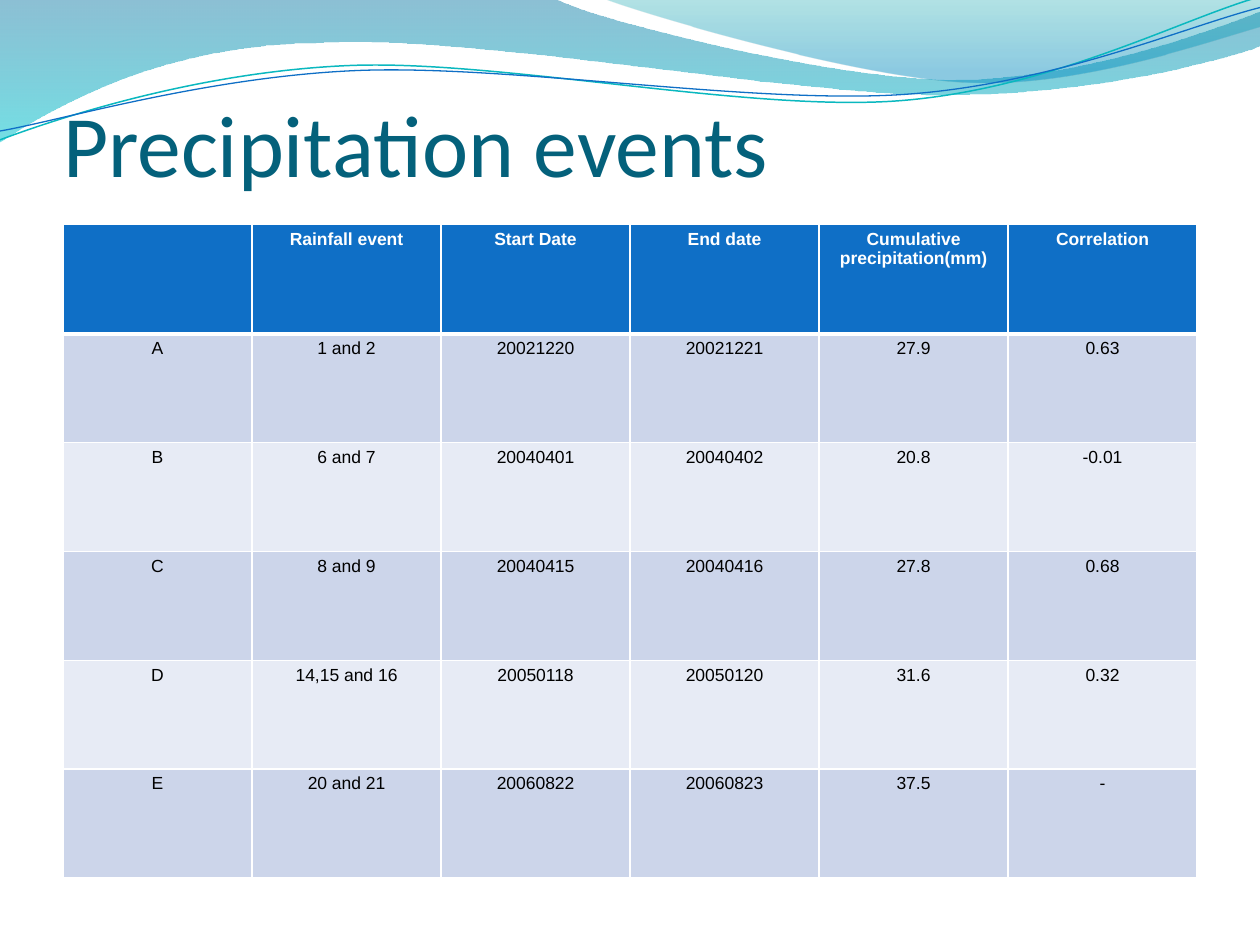
"""Build the precipitation events slide: wave header, title and event table."""
import math
from dataclasses import dataclass

from lxml import etree
from pptx import Presentation
from pptx import util as u
from pptx.dml.color import RGBColor
from pptx.enum import text
from pptx.oxml import ns

TITLE = "Precipitation events"
ROWS = [
    ("", "Rainfall event", "Start Date", "End date", "Cumulative precipitation(mm)", "Correlation"),
    ("A", "1 and 2", "20021220", "20021221", "27.9", "0.63"),
    ("B", "6 and 7", "20040401", "20040402", "20.8", "-0.01"),
    ("C", "8 and 9", "20040415", "20040416", "27.8", "0.68"),
    ("D", "14,15 and 16", "20050118", "20050120", "31.6", "0.32"),
    ("E", "20 and 21", "20060822", "20060823", "37.5", "-"),
]
BANDS = [
    {"points": [(0, -0.01), (4.4, -0.01),
                (4.76, 0.17, 6.64, 0.63, 7.58, 0.63), (8.53, 0.63, 9.58, 0.26, 10, 0.09),
                (10.01, 0.36), (9.83, 0.44, 8.7, 0.76, 7.46, 0.75),
                (6.22, 0.75, 3.82, 0.28, 2.57, 0.34), (1.29, 0.35, 0.46, 0.83, -0.01, 1.13),
                (0, -0.01)],
     "stops": [(0, "0074A1", 45), (1, "00C6CF", 55)]},
    {"points": [(4.79, -0.01), (5.09, 0.11, 6.82, 0.62, 7.69, 0.65),
                (8.56, 0.69, 9.61, 0.32, 10, 0.21), (10, 0), (4.79, -0.01)],
     "stops": [(0, "00A1A9", 30), (0.8, "008BBF", 45)]},
]
WAVES = [
    {"points": [(0, 1.11), (0.48, 0.93, 1.58, 0.57, 2.77, 0.52),
                (3.95, 0.47, 5.93, 0.89, 7.13, 0.8), (8.33, 0.71, 9.38, 0.15, 9.98, -0.02)],
     "color": "0AB8BF", "width": 0.85},
    {"points": [(0, 1.04), (0.47, 0.96, 1.64, 0.61, 2.83, 0.56),
                (4.03, 0.51, 5.97, 0.83, 7.17, 0.75), (8.36, 0.67, 9.41, 0.21, 10, 0.06)],
     "color": "0F6FC6", "width": 0.75},
]


@dataclass(frozen=True)
class Theme:
    title: str = "04617B"
    header: str = "0F6FC6"
    bands: tuple = ("E7EBF5", "CCD5EA")
    body: str = "000000"
    white: str = "FFFFFF"
    title_font: str = "Calibri"
    table_font: str = "Arial"
    title_size: int = 50
    table_size: int = 10


THEME = Theme()
WIDTH, HEIGHT, MARGIN = 10, 7.5, 0.5
TABLE_TOP, TABLE_HEIGHT, HEADER_HEIGHT = 1.78, 5.19, 0.87
WAVE_TILT, WAVE_PIVOT = -2.7, (4.99, 0.58)
HEADER_BORDERS = {"L": 1, "R": 1, "T": 1, "B": 3}


def rgb(value):
    return RGBColor.from_string(value)


def style_font(font, name, size, color, bold=False):
    font.name, font.size, font.bold = name, u.Pt(size), bold
    font.color.rgb = rgb(color)


def turn(point, degrees):
    """Rotate a point about the centre of the waves."""
    angle = math.radians(degrees)
    dx, dy = (value - centre for value, centre in zip(point, WAVE_PIVOT))
    return (WAVE_PIVOT[0] + dx * math.cos(angle) - dy * math.sin(angle),
            WAVE_PIVOT[1] + dx * math.sin(angle) + dy * math.cos(angle))


def add_outline(holder, points, close, tilt=0):
    """Draw corners as lines and six-number entries as cubic curves."""
    pairs = [turn(part[i:i + 2], -tilt) for part in points for i in range(0, len(part), 2)]
    start, *rest = [(u.Inches(x), u.Inches(y)) for x, y in pairs]
    builder = holder.shapes.build_freeform(*start)
    builder.add_line_segments(rest, close=close)
    shape = builder.convert_to_shape()
    shape.shadow.inherit = False
    shape.rotation = tilt % 360
    segments = iter(list(shape._element.iter(ns.qn("a:lnTo"))))
    for part in points[1:]:
        segment = next(segments)
        if len(part) == 6:
            curve = etree.Element(ns.qn("a:cubicBezTo"))
            segment.addprevious(curve)
            for piece in (segment, next(segments), next(segments)):
                curve.append(piece[0])
                piece.getparent().remove(piece)
    return shape


def add_band(page, points, stops):
    shape = add_outline(page, points, True)
    shape.line.fill.background()
    shape.fill.gradient()
    shape.fill.gradient_angle = 270
    for stop, (position, color, _) in zip(shape.fill.gradient_stops, stops):
        stop.position = position
        stop.color.rgb = rgb(color)
    colors = shape._element.spPr.iter(ns.qn("a:srgbClr"))
    for node, (_, _, opacity) in zip(colors, stops):
        etree.SubElement(node, ns.qn("a:alpha"), val=str(opacity * 1000))


def add_wave(group, points, color, width):
    shape = add_outline(group, points, False, WAVE_TILT)
    shape.fill.background()
    shape.line.color.rgb = rgb(color)
    shape.line.width = u.Pt(width)


def place_title(page):
    title = page.shapes.title
    page.shapes._spTree.append(title._element)
    title.left, title.top = u.Inches(MARGIN), u.Inches(0.3)
    title.width, title.height = u.Inches(WIDTH - 2 * MARGIN), u.Inches(1.25)
    frame = title.text_frame
    frame.text = TITLE
    frame.auto_size = text.MSO_AUTO_SIZE.NONE
    frame.vertical_anchor = text.MSO_ANCHOR.BOTTOM
    frame.margin_left = frame.margin_right = frame.margin_bottom = 0
    frame.margin_top = u.Inches(0.05)
    para = frame.paragraphs[0]
    para.alignment = text.PP_ALIGN.LEFT
    style_font(para.runs[0].font, THEME.title_font, THEME.title_size, THEME.title)


def set_borders(cell, widths):
    """Insert the side lines ahead of the cell fill, as the schema orders them."""
    properties = cell._tc.get_or_add_tcPr()
    for index, (side, width) in enumerate(widths.items()):
        line = etree.Element(ns.qn(f"a:ln{side}"), w=str(u.Pt(width)))
        fill = etree.SubElement(line, ns.qn("a:solidFill"))
        etree.SubElement(fill, ns.qn("a:srgbClr"), val=THEME.white)
        properties.insert(index, line)


def add_table(page):
    table = page.shapes.add_table(
        len(ROWS), len(ROWS[0]), u.Inches(MARGIN), u.Inches(TABLE_TOP),
        u.Inches(WIDTH - 2 * MARGIN), u.Inches(TABLE_HEIGHT)).table
    body_height = (TABLE_HEIGHT - HEADER_HEIGHT) / (len(ROWS) - 1)
    for r, row in enumerate(ROWS):
        header = r == 0
        table.rows[r].height = u.Inches(HEADER_HEIGHT if header else body_height)
        for c, value in enumerate(row):
            cell = table.cell(r, c)
            cell.fill.solid()
            cell.fill.fore_color.rgb = rgb(THEME.header if header else THEME.bands[r % 2])
            if header:
                set_borders(cell, HEADER_BORDERS)
            cell.margin_left = cell.margin_right = u.Inches(0.04)
            cell.margin_top = cell.margin_bottom = u.Inches(0.04)
            if not value:
                continue
            cell.text_frame.text = value
            para = cell.text_frame.paragraphs[0]
            para.alignment = text.PP_ALIGN.CENTER
            style_font(para.runs[0].font, THEME.table_font, THEME.table_size,
                       THEME.white if header else THEME.body, header)


def main():
    deck = Presentation()
    deck.slide_width, deck.slide_height = u.Inches(WIDTH), u.Inches(HEIGHT)
    page = deck.slides.add_slide(deck.slide_layouts[5])
    for band in BANDS:
        add_band(page, **band)
    waves = page.shapes.add_group_shape()
    for wave in WAVES:
        add_wave(waves, **wave)
    place_title(page)
    add_table(page)
    deck.save("out.pptx")


if __name__ == "__main__":
    main()
